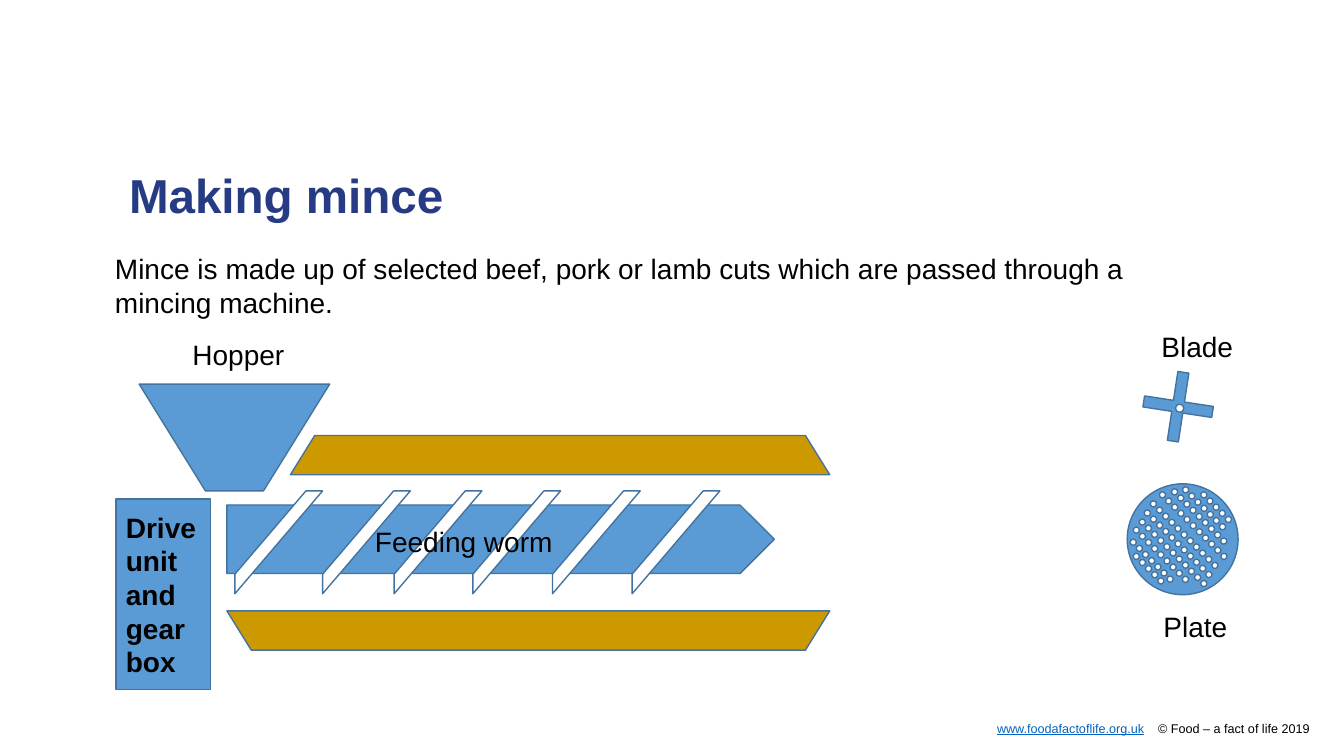
"""Build the slide that shows how a mincing machine works."""
from pptx import Presentation
from pptx.dml.color import RGBColor
from pptx.enum.shapes import MSO_SHAPE
from pptx.enum.text import MSO_ANCHOR, MSO_AUTO_SIZE, PP_ALIGN
from pptx.util import Inches, Pt

THEME = {
    "navy": RGBColor.from_string("263B83"),
    "black": RGBColor.from_string("000000"),
    "link": RGBColor.from_string("0563C1"),
    "steel": RGBColor.from_string("5B9BD5"),
    "edge": RGBColor.from_string("43739E"),
    "casing": RGBColor.from_string("CC9900"),
    "white": RGBColor.from_string("FFFFFF"),
    "font": "Arial",
    "title": Pt(34),
    "body": Pt(20),
    "footer": Pt(9),
    "outline": Pt(1),
}
CELL = Inches(0.1)


def draw(parent, kind, place, fill, adjust=None, turn=0):
    """Add an outlined preset shape at a place given in grid cells."""
    shape = parent.shapes.add_shape(kind, *[round(cells * CELL) for cells in place])
    shape.shadow.inherit = False
    shape.fill.solid()
    shape.fill.fore_color.rgb = THEME[fill]
    shape.line.color.rgb = THEME["edge"]
    shape.line.width = THEME["outline"]
    shape.rotation = turn
    if adjust is not None:
        shape.adjustments[0] = adjust
    return shape


def write(box, spans, size, frame_format, para_format):
    """Fill a box with one paragraph of (text, colour, font format) spans."""
    for name, value in frame_format.items():
        setattr(box.text_frame, name, value)
    para = box.text_frame.paragraphs[0]
    for name, value in para_format.items():
        setattr(para, name, value)
    for text, colour, font_format in spans:
        span = para.add_run()
        span.text = text
        span.font.color.rgb = THEME[colour]
        for name, value in {"name": THEME["font"], "size": THEME[size], **font_format}.items():
            setattr(span.font, name, value)
    return para


deck = Presentation()
deck.slide_width, deck.slide_height = Inches(13.33), Inches(7.5)
page = deck.slides.add_slide(deck.slide_layouts[5])

flush = dict.fromkeys(["margin_left", "margin_top", "margin_right", "margin_bottom"], 0)
flush.update(word_wrap=True, auto_size=MSO_AUTO_SIZE.NONE, vertical_anchor=MSO_ANCHOR.TOP)
left = {"alignment": PP_ALIGN.LEFT}

title = page.shapes.title
for side, cells in {"left": 12.8, "top": 17.1, "width": 106.3, "height": 7.9}.items():
    setattr(title, side, round(cells * CELL))
write(title, [("Making mince", "navy", {"bold": True})], "title", flush,
      {**left, "line_spacing": 0.9})

intro = page.shapes.add_textbox(*[round(cells * CELL) for cells in (11.4, 25, 106.3, 40.7)])
write(intro, [("Mince is made up of selected beef, pork or lamb cuts which are passed "
               "through a mincing machine.", "black", {})], "body", flush, left)

footer = page.shapes.add_textbox(*[round(cells * CELL) for cells in (12.6, 71.5, 117.3, 1.5)])
footer_spans = [("www.foodafactoflife.org.uk", "link", {"underline": True}),
                (" ", "black", {}),
                ("© Food – a fact of life 2019", "black", {})]
footer_line = write(footer, footer_spans, "footer", flush, {"alignment": PP_ALIGN.RIGHT})
footer_line.runs[1]._r.get_or_add_rPr().set("spc", "750")

slope = 0.62
draw(page, MSO_SHAPE.TRAPEZOID, (28.8, 43.2, 53.5, 3.9), "casing", slope)
draw(page, MSO_SHAPE.TRAPEZOID, (13.8, 38.1, 18.9, 10.6), "steel", slope, 180)

worm = page.shapes.add_group_shape()
draw(worm, MSO_SHAPE.PENTAGON, (22.5, 50.1, 54.3, 6.8), "steel")
for column in (23.3, 32, 39.1, 46.9, 54.8, 62.7):
    draw(worm, MSO_SHAPE.DIAGONAL_STRIPE, (column, 48.7, 8.7, 10.2), "white", 0.81)

draw(page, MSO_SHAPE.TRAPEZOID, (22.5, 60.6, 59.8, 3.9), "casing", slope, 180)

drive = draw(page, MSO_SHAPE.RECTANGLE, (11.5, 49.5, 9.4, 18.9), "steel")
write(drive, [("Drive unit and gear box", "black", {"bold": True})], "body",
      {"word_wrap": True, "vertical_anchor": MSO_ANCHOR.MIDDLE}, left)

blade = page.shapes.add_group_shape()
draw(blade, MSO_SHAPE.CROSS, (113.4, 36.9, 6.9, 6.9), "steel", 0.42, 8.7)
draw(blade, MSO_SHAPE.OVAL, (116.6, 40.1, 0.8, 0.8), "white")

plate = page.shapes.add_group_shape()
draw(plate, MSO_SHAPE.OVAL, (111.8, 48, 11, 11), "steel")
hole_rows = [(115, 48.8, 11), (114.1, 49.7, 11), (113.5, 50.6, 11), (113, 51.5, 11),
             (112.4, 52.3, 9), (112.1, 53.5, 7), (112.4, 54.9, 5),
             (116.2, 48.5, 9), (117.3, 48.3, 7), (119.1, 48.8, 5)]
hole, pitch = 0.6, 0.61
for column, row, count in hole_rows:
    for step in range(count):
        draw(plate, MSO_SHAPE.OVAL,
             (column + step * pitch, row + step * pitch, hole, hole), "white")

labels = {"Feeding worm": (36.2, 51.5, 19.8, 4.4), "Hopper": (18.1, 33, 11.2, 4.4),
          "Plate": (114.4, 60, 8.4, 4.4), "Blade": (114.2, 32.2, 9.2, 4.4)}
for text, place in labels.items():
    label = page.shapes.add_textbox(*[round(cells * CELL) for cells in place])
    write(label, [(text, "black", {})], "body",
          {"word_wrap": False, "auto_size": MSO_AUTO_SIZE.SHAPE_TO_FIT_TEXT}, left)

deck.save("out.pptx")
